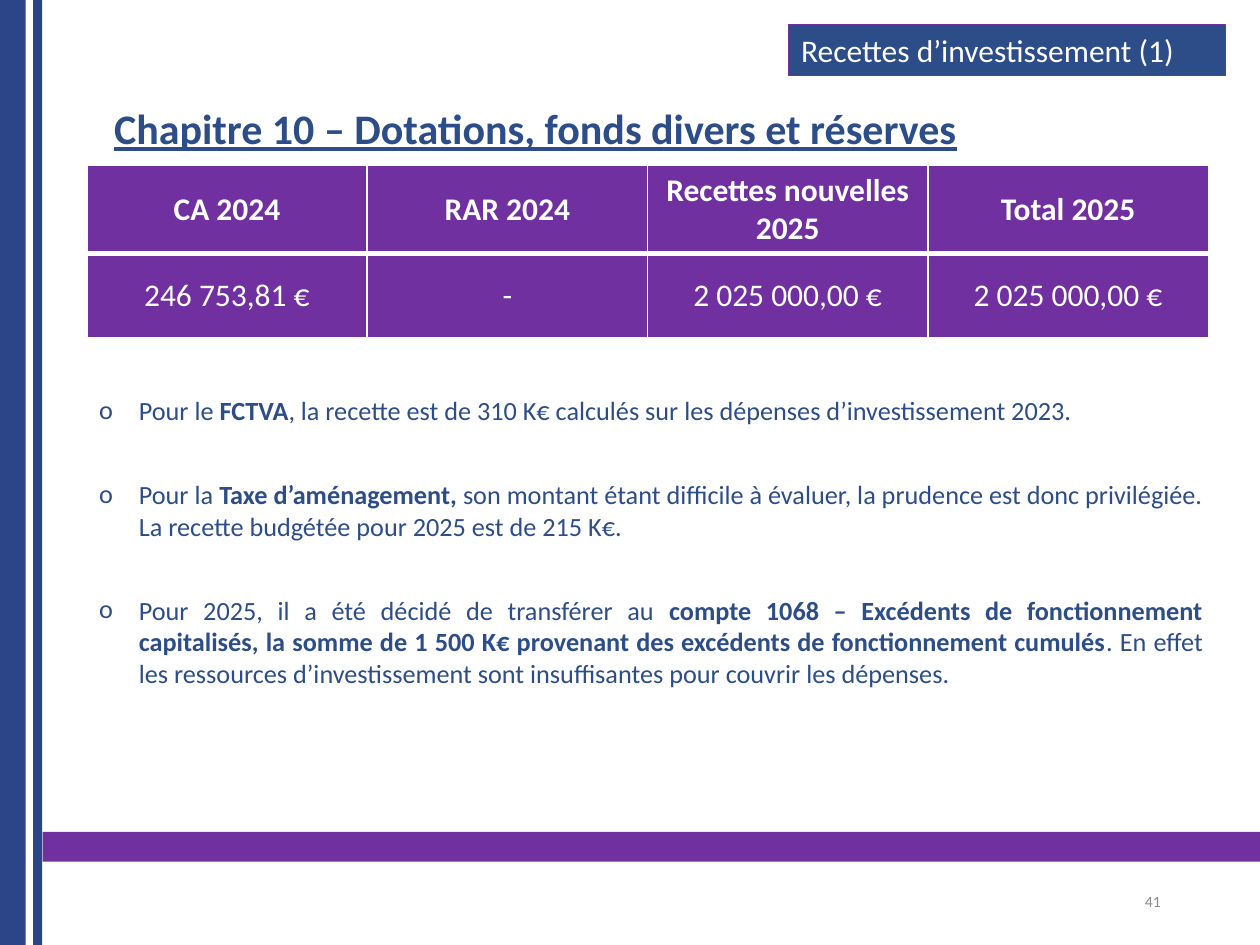
from typing import NamedTuple

from lxml.etree import SubElement
from pptx import Presentation
from pptx.dml.color import RGBColor
from pptx.enum.shapes import MSO_SHAPE
from pptx.enum.text import MSO_ANCHOR, PP_ALIGN
from pptx.oxml.ns import qn
from pptx.util import Cm, Pt

PURPLE = RGBColor(0x70, 0x30, 0xA0)
STRIPE_BLUE = RGBColor(0x2C, 0x45, 0x88)
TEXT_BLUE = RGBColor(0x2C, 0x4D, 0x88)
GREY = RGBColor(0x8C, 0x8C, 0x8C)
WHITE = RGBColor(0xFF, 0xFF, 0xFF)

FONT = "Calibri"
CONTENT_LEFT = 1.75
CONTENT_WIDTH = 22.61


class Area(NamedTuple):
    """Left, top, width and height in centimetres."""
    left: float
    top: float
    width: float
    height: float

    def lengths(self) -> list:
        return [Cm(value) for value in self]


class Bar(NamedTuple):
    area: Area
    color: RGBColor


class Span(NamedTuple):
    text: str
    bold: bool = False


BARS = [
    Bar(Area(0.86, 16.77, 24.54, 0.6), PURPLE),
    Bar(Area(0, 0, 0.52, 19.05), STRIPE_BLUE),
    Bar(Area(0.67, 0, 0.18, 19.05), STRIPE_BLUE),
]

TABLE_ROWS = [
    ["CA 2024", "RAR 2024", "Recettes nouvelles 2025", "Total 2025"],
    ["246 753,81 €", "-", "2 025 000,00 €", "2 025 000,00 €"],
]
ROW_HEIGHTS = [1.68, 1.7]

BULLETS = [
    [Span("Pour le "), Span("FCTVA", True),
     Span(", la recette est de 310 K€ calculés sur les dépenses "
          "d’investissement 2023.")],
    [Span("Pour la "), Span("Taxe d’aménagement, ", True),
     Span("son montant étant difficile à évaluer, la prudence est donc "
          "privilégiée. La recette budgétée pour 2025 est de 215 K€.")],
    [Span("Pour 2025, il a été décidé de transférer au "),
     Span("compte 1068 – Excédents de fonctionnement capitalisés, la somme de "
          "1 500 K€ provenant des excédents de fonctionnement cumulés", True),
     Span(". En effet les ressources d’investissement sont insuffisantes "
          "pour couvrir les dépenses.")],
]


def add_span(para, text: str, size: float, color: RGBColor, **formats) -> None:
    span = para.add_run()
    span.text = text
    values = {"name": FONT, "size": Pt(size), "bold": False, **formats}
    for key, value in values.items():
        setattr(span.font, key, value)
    span.font.color.rgb = color


def add_rectangle(page, area: Area, color: RGBColor):
    box = page.shapes.add_shape(MSO_SHAPE.RECTANGLE, *area.lengths())
    box.shadow.inherit = False
    box.fill.solid()
    box.fill.fore_color.rgb = color
    box.line.fill.background()
    return box


def add_text_box(page, area: Area):
    frame = page.shapes.add_textbox(*area.lengths()).text_frame
    frame.word_wrap = True
    return frame


def set_bullet(para, char: str, indent: float) -> None:
    properties = para._p.get_or_add_pPr()
    properties.set("marL", str(Cm(indent)))
    properties.set("indent", str(-Cm(indent)))
    SubElement(properties, qn("a:buFont"), typeface=FONT)
    SubElement(properties, qn("a:buChar"), char=char)


def set_borders(cell, widths: dict) -> None:
    properties = cell._tc.get_or_add_tcPr()
    for side, width in widths.items():
        line = SubElement(properties, qn(f"a:ln{side}"), w=str(Pt(width)))
        fill = SubElement(line, qn("a:solidFill"))
        SubElement(fill, qn("a:srgbClr"), val=str(WHITE))


def add_title(page) -> None:
    title = page.shapes.title
    area = Area(CONTENT_LEFT, 2.06, CONTENT_WIDTH, 1.6)
    for key, value in zip(area._fields, area.lengths()):
        setattr(title, key, value)
    frame = title.text_frame
    frame.vertical_anchor = MSO_ANCHOR.TOP
    frame.margin_left = Cm(0.55)
    para = frame.paragraphs[0]
    para.alignment = PP_ALIGN.LEFT
    para.line_spacing = 0.9
    add_span(para, "Chapitre 10 – Dotations, fonds divers et réserves",
             24, TEXT_BLUE, bold=True, underline=True)


def add_section_label(page) -> None:
    box = add_rectangle(page, Area(15.9, 0.5, 8.8, 1.02), TEXT_BLUE)
    box.line.color.rgb = PURPLE
    box.line.width = Pt(0.75)
    box.text_frame.vertical_anchor = MSO_ANCHOR.TOP
    para = box.text_frame.paragraphs[0]
    para.alignment = PP_ALIGN.LEFT
    add_span(para, "Recettes d’investissement (1)", 18, WHITE)


def add_amounts_table(page) -> None:
    area = Area(CONTENT_LEFT, 3.33, CONTENT_WIDTH, sum(ROW_HEIGHTS))
    table = page.shapes.add_table(
        len(TABLE_ROWS), len(TABLE_ROWS[0]), *area.lengths()).table
    for row_index, texts in enumerate(TABLE_ROWS):
        table.rows[row_index].height = Cm(ROW_HEIGHTS[row_index])
        header = row_index == 0
        widths = {"L": 1, "R": 1, "T": 1 if header else 3,
                  "B": 3 if header else 1}
        for column_index, text in enumerate(texts):
            cell = table.cell(row_index, column_index)
            set_borders(cell, widths)
            cell.fill.solid()
            cell.fill.fore_color.rgb = PURPLE
            cell.vertical_anchor = MSO_ANCHOR.MIDDLE
            para = cell.text_frame.paragraphs[0]
            para.alignment = PP_ALIGN.CENTER
            add_span(para, text, 18, WHITE, bold=header)


def add_comments(page) -> None:
    frame = add_text_box(page, Area(CONTENT_LEFT, 7.83, 22.75, 6.2))
    for index, spans in enumerate(BULLETS):
        para = frame.add_paragraph() if index else frame.paragraphs[0]
        para.alignment = PP_ALIGN.JUSTIFY
        para.space_after = Pt(30)
        set_bullet(para, "o", 0.8)
        for span in spans:
            add_span(para, span.text, 15, TEXT_BLUE, bold=span.bold)


def add_page_number(page) -> None:
    frame = add_text_box(page, Area(17.93, 17.65, 5.72, 1.02))
    frame.vertical_anchor = MSO_ANCHOR.MIDDLE
    para = frame.paragraphs[0]
    para.alignment = PP_ALIGN.RIGHT
    add_span(para, "41", 9, GREY)


def main() -> None:
    deck = Presentation()
    deck.slide_width, deck.slide_height = Cm(25.4), Cm(19.05)
    page = deck.slides.add_slide(deck.slide_layouts.get_by_name("Title Only"))

    # Frame of the page
    for bar in BARS:
        add_rectangle(page, bar.area, bar.color)
    add_page_number(page)

    # Headings
    add_title(page)
    add_section_label(page)

    # Amounts and comments
    add_comments(page)
    add_amounts_table(page)

    deck.save("out.pptx")


if __name__ == "__main__":
    main()
